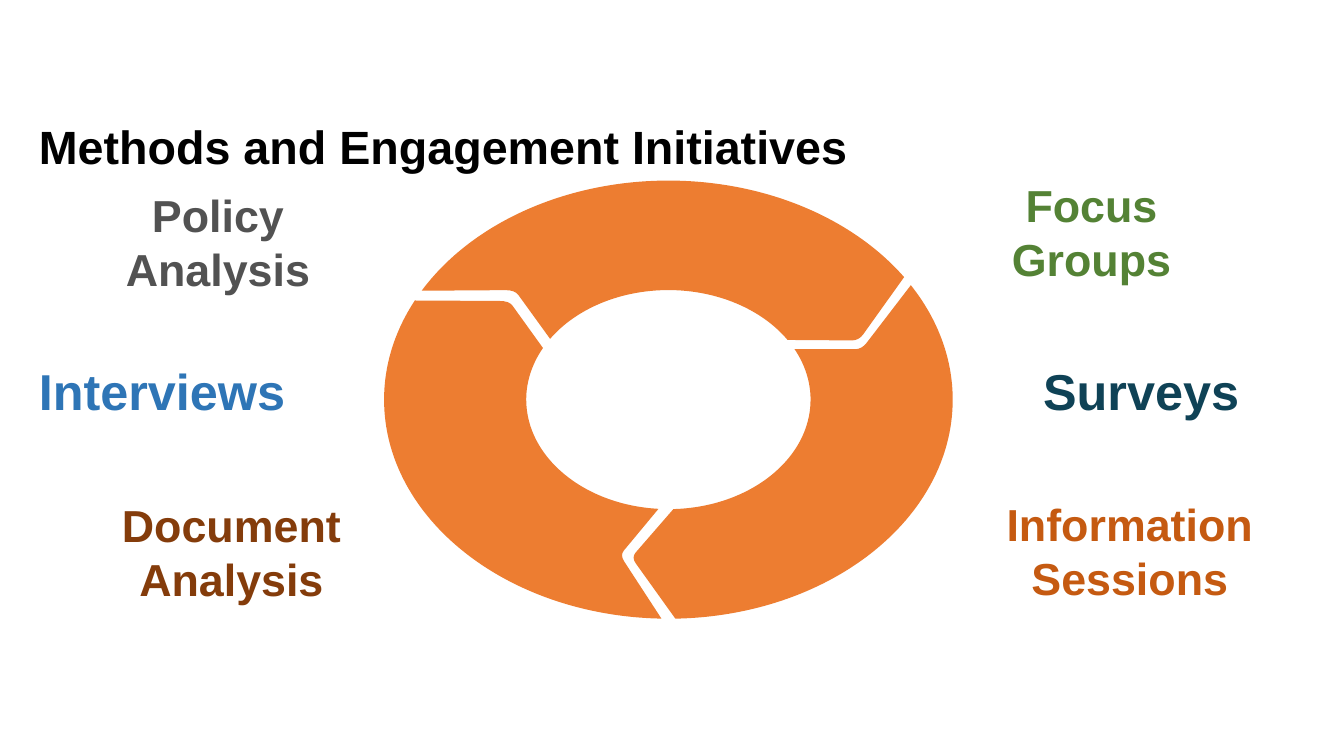
import collections
import dataclasses
import itertools
import math

import pptx
import pptx.dml.color
import pptx.enum.text
import pptx.oxml.ns
import pptx.util

Cm = pptx.util.Cm
Align = pptx.enum.text.PP_ALIGN
qn = pptx.oxml.ns.qn
Box = collections.namedtuple("Box", "left top width height")
Segment = collections.namedtuple("Segment", "outer end_corner inner start_corner")


@dataclasses.dataclass(frozen=True)
class Theme:
    """Colours, font and type sizes of the slide."""
    font: str = "Arial"
    title_size: float = 33.3
    pair_size: float = 32
    single_size: float = 36
    title: str = "000000"
    ring: str = "ED7D31"
    policy: str = "525252"
    interviews: str = "2E75B6"
    document: str = "843C0B"
    focus: str = "548235"
    surveys: str = "0F4256"
    information: str = "C55A11"


THEME = Theme()
HOLE = 0.5
ROUNDING = 0.1
SEGMENTS = [
    Segment((328.5, 448.6), (-0.13, 0.72), (448, 332.5), (0.68, -0.23)),
    Segment((209.8, 326), (0.67, -0.27), (327, 213.7), (-0.54, -0.5)),
    Segment((91.4, 206.9), (-0.56, -0.45), (208.1, 94), (-0.17, 0.71)),
]


def color(code):
    """Turn a hex code into a colour."""
    return pptx.dml.color.RGBColor.from_string(code)


def add_text(slide, box, text, *, size, fill, align=Align.LEFT, spacing=None):
    """Place one bold, wrapping paragraph in the box."""
    shape = slide.shapes.add_textbox(*map(Cm, box))
    shape.text_frame.word_wrap = True
    paragraph = shape.text_frame.paragraphs[0]
    paragraph.alignment = align
    paragraph.line_spacing = spacing
    run = paragraph.add_run()
    run.text = text
    run.font.name = THEME.font
    run.font.size = pptx.util.Pt(size)
    run.font.bold = True
    run.font.color.rgb = color(fill)


def arc(angles, radius):
    """Give an arc as a start point and one cubic curve per quadrant."""
    start, end = angles
    quarters = [a for a in range(0, 541, 90) if min(angles) < a < max(angles)]
    stops = [start, *sorted(quarters, reverse=end < start), end]
    steps = [[polar(start, radius)]]
    for first, last in itertools.pairwise(stops):
        reach = 4 / 3 * math.tan(math.radians(last - first) / 4)
        (x1, y1), (x2, y2) = polar(first, radius), polar(last, radius)
        steps.append([(x1 - reach * y1, y1 + reach * x1),
                      (x2 + reach * y2, y2 - reach * x2), (x2, y2)])
    return steps


def polar(angle, radius):
    """Give the point at an angle in degrees on a circle."""
    turn = math.radians(angle)
    return radius * math.cos(turn), radius * math.sin(turn)


def between(start, end, share):
    """Give the point at a share of the way from start to end."""
    return tuple(a + (b - a) * share for a, b in zip(start, end))


def rounded(before, corner, after):
    """Give a corner as a start point and one cubic curve."""
    first, last = (between(corner, point, ROUNDING) for point in (before, after))
    return [[first], [between(first, corner, 2 / 3), between(last, corner, 2 / 3), last]]


def add_curves(shapes, box, steps):
    """Draw a closed outline whose three-point steps are cubic curves."""
    points = [(Cm(box.left + box.width * (1 + x) / 2),
               Cm(box.top + box.height * (1 + y) / 2))
              for x, y in itertools.chain(*steps)]
    builder = shapes.build_freeform(*points[0])
    builder.add_line_segments(points[1:], close=True)
    shape = builder.convert_to_shape()
    outline = next(shape.element.iter(qn("a:path")))
    lines = iter(outline.findall(qn("a:lnTo")))
    for step in steps[1:]:
        curve, *others = itertools.islice(lines, len(step))
        if others:
            curve.tag = qn("a:cubicBezTo")
        for other in others:
            curve.append(other[0])
            outline.remove(other)
    return shape


def add_ring(slide, box):
    """Draw the ring of interlocking segments filling the box."""
    group = slide.shapes.add_group_shape()
    for segment in SEGMENTS:
        outer = arc(segment.outer, 1)
        inner = arc(segment.inner, HOLE)
        steps = (outer + rounded(outer[-1][-1], segment.end_corner, inner[0][0])
                 + inner + rounded(inner[-1][-1], segment.start_corner, outer[0][0]))
        shape = add_curves(group.shapes, box, steps)
        shape.shadow.inherit = False
        shape.fill.solid()
        shape.fill.fore_color.rgb = color(THEME.ring)
        shape.line.fill.background()


def add_labels(slide, box, labels):
    """Place method labels, each offset from the box corner."""
    for text, fill, left, top, width in labels:
        paired = " " in text
        add_text(slide, Box(box.left + left, box.top + top, width, 3 if paired else 1.8),
                 text, fill=fill,
                 size=THEME.pair_size if paired else THEME.single_size,
                 align=Align.CENTER if paired else Align.LEFT)


def build_methods_slide(presentation):
    """Add the slide of methods around the ring."""
    slide = presentation.slides.add_slide(presentation.slide_layouts[6])
    add_text(slide, Box(0.73, 3, 22.02, 2.16), "Methods and Engagement Initiatives",
             size=THEME.title_size, fill=THEME.title, spacing=0.9)
    add_ring(slide, Box(9.68, 4.55, 14.33, 11.04))
    add_labels(slide, Box(0.73, 4.36, 32.6, 11.05), [
        ("Focus Groups", THEME.focus, 22.87, 0, 7.82),
        ("Policy Analysis", THEME.policy, 1.5, 0.24, 6.53),
        ("Information Sessions", THEME.information, 23.45, 8.03, 8.59),
        ("Interviews", THEME.interviews, 0, 4.59, 7.39),
        ("Surveys", THEME.surveys, 25.31, 4.59, 7.24),
        ("Document Analysis", THEME.document, 1.61, 8.06, 6.99),
    ])


def main():
    """Create and save the presentation."""
    presentation = pptx.Presentation()
    presentation.slide_width = Cm(33.87)
    presentation.slide_height = Cm(19.05)
    build_methods_slide(presentation)
    presentation.save("out.pptx")


if __name__ == "__main__":
    main()
